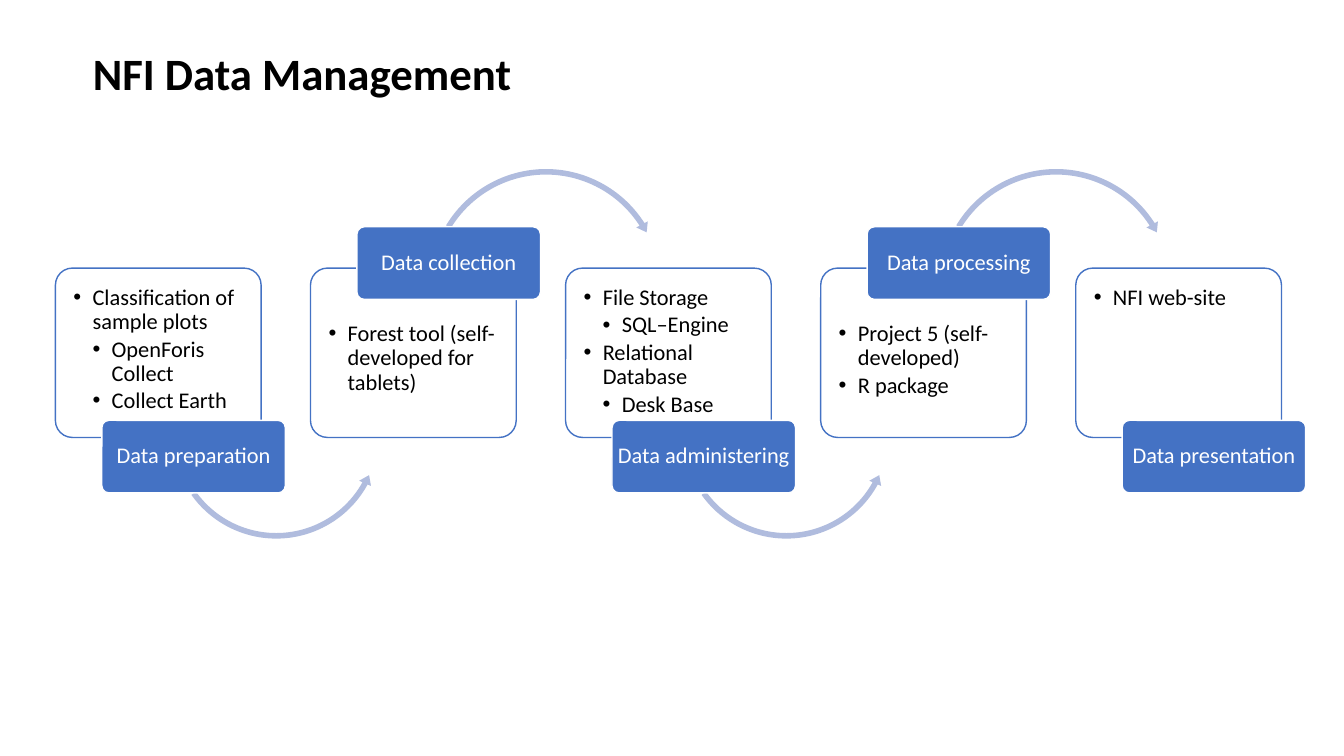
from lxml.etree import SubElement
from pptx import Presentation
from pptx.dml.color import RGBColor
from pptx.enum.shapes import MSO_SHAPE as Shape
from pptx.enum.text import MSO_ANCHOR as Anchor, MSO_AUTO_SIZE as AutoSize, PP_ALIGN as Align
from pptx.oxml.ns import qn
from pptx.util import Inches, Pt

BLUE, PALE_BLUE, WHITE, BLACK = "4472C4", "B0BCDE", "FFFFFF", "000000"

# Grid: five columns at an equal pitch, with one row for all cards
LEFT, PITCH = 0.55, 2.53
CARD_TOP, CARD_WIDTH, CARD_HEIGHT = 2.66, 2.04, 1.68
LABEL_WIDTH, LABEL_HEIGHT, LABEL_SHIFT = 1.82, 0.72, 0.46
INDENT = 0.19

# Labels and arrows sit below the even cards and above the odd ones
BELOW = {
    "label_top": 4.17, "text_inset": 0.13, "arrow": Shape.LEFT_CIRCULAR_ARROW,
    "arrow_box": (1.12, 3.24, 2.14), "angles": (0.026, 3.097, 17.311, 86.704, 0.03),
}
ABOVE = {
    "label_top": 2.25, "text_inset": 0.49, "arrow": Shape.CIRCULAR_ARROW,
    "arrow_box": (1.14, 1.64, 2.39), "angles": (0.023, 2.754, 196.458, 126.722, 0.027),
}

# Each step: label, then list entries as (level, text)
STEPS = [
    ("Data preparation", [(1, "Classification of sample plots"),
                          (2, "OpenForis Collect"), (2, "Collect Earth")]),
    ("Data collection", [(1, "Forest tool (self-developed for tablets)")]),
    ("Data administering", [(1, "File Storage"), (2, "SQL–Engine"),
                            (1, "Relational Database"), (2, "Desk Base")]),
    ("Data processing", [(1, "Project 5 (self-developed)"), (1, "R package")]),
    ("Data presentation", [(1, "NFI web-site")]),
]


def color(value):
    return RGBColor.from_string(value)


def apply(target, values):
    for name, value in values.items():
        setattr(target, name, value)


def format_font(font, value, size=16, bold=False):
    apply(font, {"name": "Calibri", "size": Pt(size), "bold": bold})
    font.color.rgb = color(value)


def set_frame(frame, left, top, right, bottom, anchor):
    apply(frame, {
        "word_wrap": True, "vertical_anchor": anchor,
        "margin_left": Inches(left), "margin_top": Inches(top),
        "margin_right": Inches(right), "margin_bottom": Inches(bottom),
    })


def add_filled(page, kind, box, fill, line=None, adjustments=(0.1,)):
    shape = page.shapes.add_shape(kind, *map(Inches, box))
    shape.shadow.inherit = False
    for number, value in enumerate(adjustments):
        shape.adjustments[number] = value
    shape.fill.solid()
    shape.fill.fore_color.rgb = color(fill)
    if line:
        shape.line.color.rgb = color(line)
        shape.line.width = Pt(1)
    else:
        shape.line.fill.background()
    return shape


def add_bullet(para, level):
    properties = para._p.get_or_add_pPr()
    properties.set("marL", str(Inches(INDENT * level)))
    properties.set("indent", str(-Inches(INDENT)))
    SubElement(properties, qn("a:buFont"), typeface="Arial")
    SubElement(properties, qn("a:buChar"), char="•")


def add_card(page, left, entries, text_inset):
    box = (left, CARD_TOP, CARD_WIDTH, CARD_HEIGHT)
    card = add_filled(page, Shape.ROUNDED_RECTANGLE, box, WHITE, BLUE)
    fill_color = card.fill._xPr.find(qn("a:solidFill"))[0]
    SubElement(fill_color, qn("a:alpha"), val="90000")
    frame = card.text_frame
    set_frame(frame, 0.13, text_inset, 0.12, 0.1, Anchor.TOP)
    for number, (level, text) in enumerate(entries):
        para = frame.add_paragraph() if number else frame.paragraphs[0]
        add_bullet(para, level)
        apply(para, {"level": level, "alignment": Align.LEFT,
                     "line_spacing": 0.9, "space_after": Pt(2.4)})
        span = para.add_run()
        span.text = text
        format_font(span.font, BLACK)


def add_label(page, left, top, text):
    box = (left + LABEL_SHIFT, top, LABEL_WIDTH, LABEL_HEIGHT)
    label = add_filled(page, Shape.ROUNDED_RECTANGLE, box, BLUE, WHITE)
    set_frame(label.text_frame, 0.02, 0.02, 0.02, 0.02, Anchor.MIDDLE)
    para = label.text_frame.paragraphs[0]
    apply(para, {"alignment": Align.CENTER, "line_spacing": 0.9})
    span = para.add_run()
    span.text = text
    format_font(span.font, WHITE)


def add_arrow(page, left, side):
    shift, top, size = side["arrow_box"]
    add_filled(page, side["arrow"], (left + shift, top, size, size),
               PALE_BLUE, adjustments=side["angles"])


def add_title(page, text):
    title = page.shapes.title
    apply(title, {"left": Inches(0.82), "top": Inches(0.4),
                  "width": Inches(6.67), "height": Inches(0.64)})
    frame = title.text_frame
    set_frame(frame, 0.1, 0.05, 0.1, 0.05, Anchor.TOP)
    frame.auto_size = AutoSize.SHAPE_TO_FIT_TEXT
    para = frame.paragraphs[0]
    para.alignment = Align.LEFT
    span = para.add_run()
    span.text = text
    format_font(span.font, BLACK, 32, True)


def main():
    deck = Presentation()
    apply(deck, {"slide_width": Inches(13.33), "slide_height": Inches(7.5)})
    page = deck.slides.add_slide(deck.slide_layouts.get_by_name("Title Only"))
    add_title(page, "NFI Data Management")

    # Process chain
    for number, (label, entries) in enumerate(STEPS):
        left = LEFT + number * PITCH
        side = ABOVE if number % 2 else BELOW
        add_card(page, left, entries, side["text_inset"])
        if number < len(STEPS) - 1:
            add_arrow(page, left, side)
        add_label(page, left, side["label_top"], label)

    deck.save("out.pptx")


if __name__ == "__main__":
    main()
